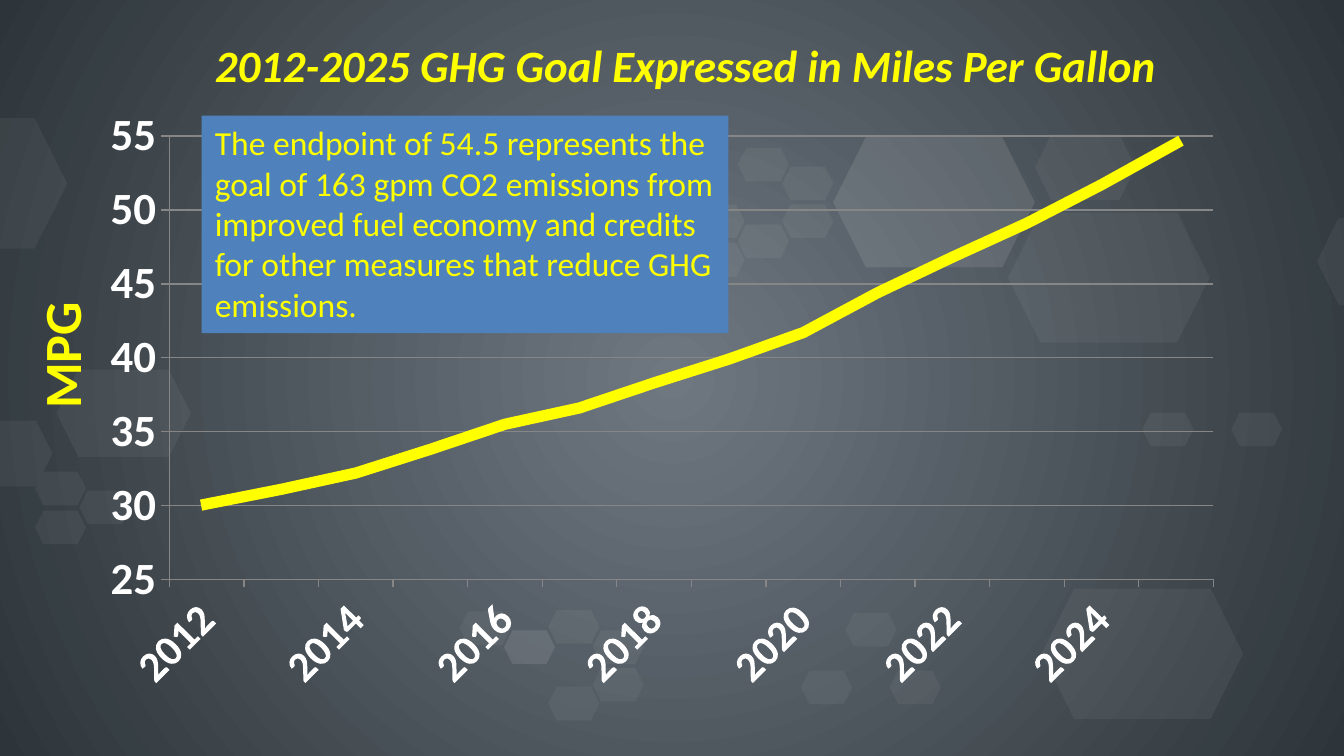
from lxml.etree import SubElement
from pptx import Presentation
from pptx.chart.data import CategoryChartData
from pptx.dml.color import RGBColor
from pptx.enum.chart import XL_CHART_TYPE, XL_TICK_MARK
from pptx.enum.shapes import MSO_SHAPE
from pptx.enum.text import MSO_ANCHOR, PP_ALIGN
from pptx.oxml import parse_xml
from pptx.oxml.ns import nsdecls, qn
from pptx.util import Inches, Pt

YELLOW, WHITE, BLUE, GRID = "FFFF00", "FFFFFF", "4F81BD", "868686"
FONT = "Calibri"
MPG_BY_YEAR = dict(zip(range(2012, 2026), [
    30.1, 31.1, 32.2, 33.8, 35.5, 36.6, 38.3,
    39.9, 41.7, 44.4, 46.8, 49.1, 51.7, 54.5]))

# Hexagon places (left, top) by (width, height, opacity in percent)
HEXAGONS = {
    (1.5, 0.97, 5): [(-1, 0.88), (7.5, 1.58), (7.75, 4.38)],
    (1.5, 0.97, 10): [(6.2, 1.02)],
    (1, 0.65, 5): [(9.8, 1.62), (0.42, 2.75)],
    (0.75, 0.49, 5): [(-0.36, 3.13), (7.7, 1)],
    (0.38, 0.25, 5): [
        (0.26, 3.51), (0.26, 3.8), (0.59, 3.65),
        (5.82, 1.24), (5.49, 1.1), (5.16, 1.52), (5.49, 1.67),
        (5.82, 1.52), (5.16, 1.81), (8.5, 3.07), (9.16, 3.07),
        (4.41, 4.69), (4.08, 4.54), (4.08, 5.11), (4.41, 4.97),
        (3.42, 4.55), (6.29, 4.56), (5.96, 4.99), (6.62, 4.99)],
    (0.38, 0.25, 10): [(3.75, 4.69)],
}


def color(hex_string):
    return RGBColor.from_string(hex_string)


def style_font(font, size, hex_string, bold=False, italic=False):
    font.name, font.size = FONT, Pt(size)
    font.bold, font.italic = bold, italic
    font.color.rgb = color(hex_string)


def add_plain_shape(slide, kind, box, fill):
    shape = slide.shapes.add_shape(kind, *map(Inches, box))
    shape.shadow.inherit = False
    shape.fill.solid()
    shape.fill.fore_color.rgb = color(fill)
    shape.line.fill.background()
    return shape


def draw_backdrop(slide):
    # Radial gradient, light in the centre
    fill = slide.background.fill
    fill.gradient()
    for stop, (position, shade) in zip(fill.gradient_stops, [(0, "6F7881"), (1, "2D353A")]):
        stop.position = position
        stop.color.rgb = color(shade)
    gradient = next(slide.element.iter(qn("a:gradFill")))
    for linear in gradient.findall(qn("a:lin")):
        gradient.remove(linear)
    gradient.find(qn("a:gsLst")).addnext(parse_xml(
        f'<a:path {nsdecls("a")} path="circle">'
        '<a:fillToRect l="50000" t="50000" r="50000" b="50000"/></a:path>'))

    # Translucent hexagons
    for (width, height, opacity), places in HEXAGONS.items():
        for left, top in places:
            hexagon = add_plain_shape(slide, MSO_SHAPE.HEXAGON, (left, top, width, height), WHITE)
            solid = hexagon.element.spPr.find(qn("a:solidFill"))
            SubElement(solid[0], qn("a:alpha"), val=str(opacity * 1000))


def add_label(slide, box, text, size, italic=False, rotation=0, wrap=True, align=PP_ALIGN.LEFT):
    label = slide.shapes.add_textbox(*map(Inches, box))
    label.rotation = rotation
    label.text_frame.word_wrap = wrap
    paragraph = label.text_frame.paragraphs[0]
    paragraph.text, paragraph.alignment = text, align
    style_font(paragraph.font, size, YELLOW, bold=True, italic=italic)


def draw_mpg_chart(slide, box):
    data = CategoryChartData()
    data.categories = [str(year) for year in MPG_BY_YEAR]
    data.add_series("Series 1", MPG_BY_YEAR.values())
    chart = slide.shapes.add_chart(XL_CHART_TYPE.LINE, *map(Inches, box), data).chart
    chart.has_legend = chart.has_title = False
    style_font(chart.font, 18, "000000")
    chart.plots[0].vary_by_categories = False

    # Goal line with square ends
    goal = chart.plots[0].series[0]
    goal.smooth = False
    goal.format.line.color.rgb = color(YELLOW)
    goal.format.line.width = Pt(6)
    series = next(chart.element.iter(qn("c:ser")))
    next(series.iter(qn("a:ln"))).set("cap", "sq")

    # Axes
    years, mpg = chart.category_axis, chart.value_axis
    for axis, size in ((years, 23), (mpg, 24)):
        style_font(axis.tick_labels.font, size, WHITE, bold=True)
        axis.major_tick_mark = XL_TICK_MARK.OUTSIDE
        axis.format.line.color.rgb = color(GRID)
    mpg.minimum_scale, mpg.maximum_scale, mpg.major_unit = 25, 55, 5
    mpg.has_major_gridlines = True
    mpg.major_gridlines.format.line.color.rgb = color(GRID)

    # Slanted labels for every second year
    year_axis = next(chart.element.iter(qn("c:catAx")))
    year_axis.find(qn("c:txPr")).find(qn("a:bodyPr")).set("rot", "-2700000")
    year_axis.find(qn("c:noMultiLvlLbl")).addprevious(
        parse_xml(f'<c:tickLblSkip {nsdecls("c")} val="2"/>'))

    # Inner plot area as fractions of the chart
    plot_area = next(chart.element.iter(qn("c:plotArea")))
    for layout in plot_area.findall(qn("c:layout")):
        plot_area.remove(layout)
    sizes = "".join(f'<c:{tag} val="{value}"/>' for tag, value in (
        ("x", 0.06), ("y", 0.041), ("w", 0.914), ("h", 0.747)))
    plot_area.insert(0, parse_xml(
        f'<c:layout {nsdecls("c")}><c:manualLayout><c:layoutTarget val="inner"/>'
        f'<c:xMode val="edge"/><c:yMode val="edge"/>{sizes}</c:manualLayout></c:layout>'))


def draw_endpoint_note(slide, box):
    note = add_plain_shape(slide, MSO_SHAPE.RECTANGLE, box, BLUE)
    frame = note.text_frame
    frame.word_wrap = True
    frame.vertical_anchor = MSO_ANCHOR.TOP
    paragraph = frame.paragraphs[0]
    paragraph.text = (
        "The endpoint of 54.5 represents the goal of 163 gpm CO2 emissions from "
        "improved fuel economy and credits for other measures that reduce GHG emissions.")
    paragraph.alignment = PP_ALIGN.LEFT
    style_font(paragraph.font, 18, YELLOW)


def main():
    deck = Presentation()
    # Widescreen, 16 to 9
    deck.slide_width = Inches(10)
    deck.slide_height = deck.slide_width * 9 // 16
    slide = deck.slides.add_slide(deck.slide_layouts[6])
    draw_backdrop(slide)
    add_label(slide, (1.5, 0.23, 7.58, 0.5),
              "2012-2025 GHG Goal Expressed in Miles Per Gallon", 24, italic=True)
    draw_mpg_chart(slide, (0.75, 0.81, 8.5, 4.44))
    add_label(slide, (-0.05, 2.36, 1, 0.57), "MPG", 28, rotation=270,
              wrap=False, align=PP_ALIGN.CENTER)
    draw_endpoint_note(slide, (1.5, 0.86, 3.92, 1.62))
    deck.save("out.pptx")


if __name__ == "__main__":
    main()
